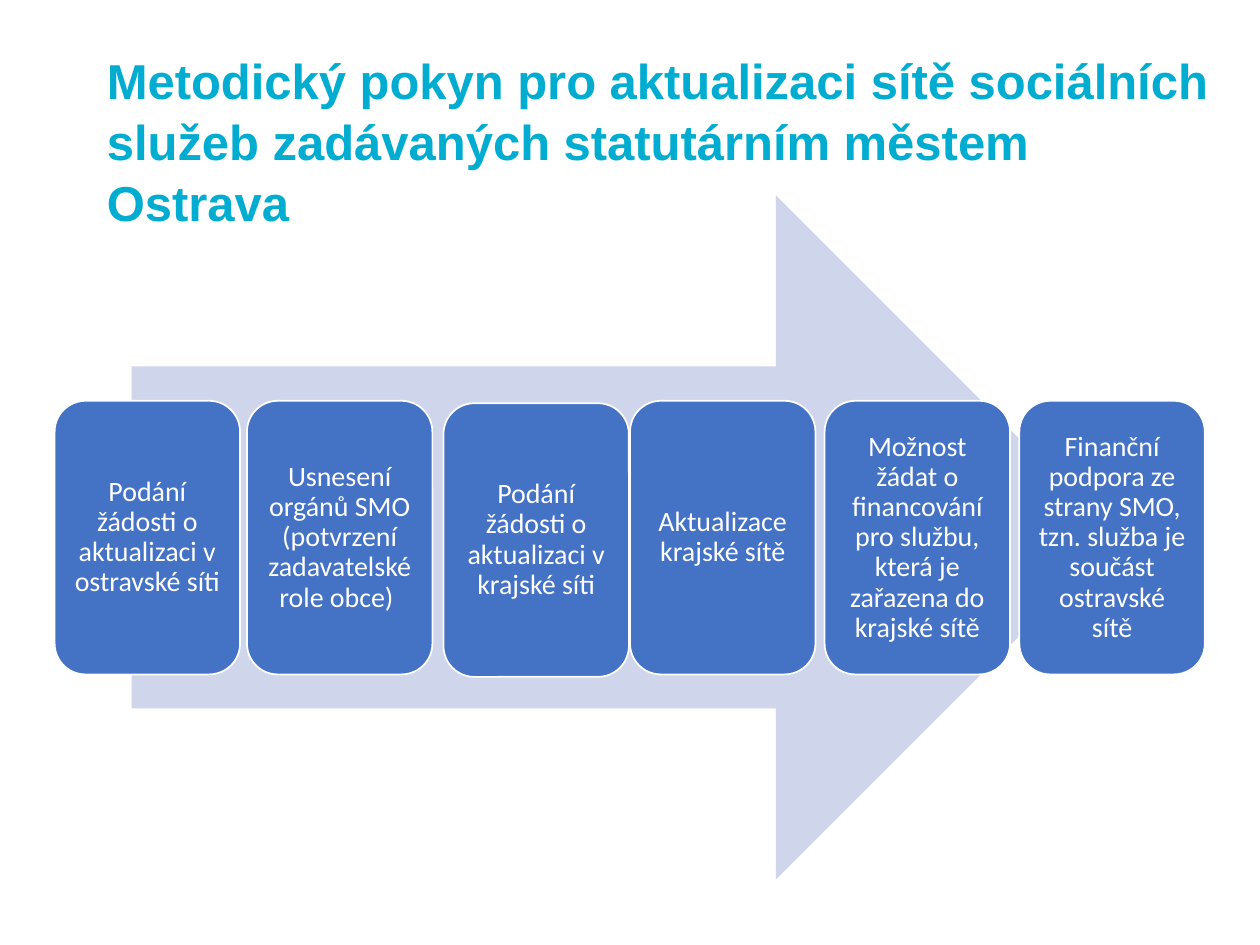
from pptx import Presentation
from pptx.dml.color import RGBColor
from pptx.enum import shapes, text
from pptx.util import Pt

hues = {"title": "00ADD0", "arrow": "CFD5EA", "step": "4472C4", "white": "FFFFFF"}
steps = [
    (31.2, 229, "Podání žádosti o aktualizaci v ostravské síti"),
    (141.1, 229, "Usnesení orgánů SMO (potvrzení zadavatelské role obce) "),
    (253.4, 230.4, "Podání žádosti o aktualizaci v krajské síti"),
    (360, 229, "Aktualizace krajské sítě"),
    (471.2, 229, "Možnost žádat o financování pro službu, která je zařazena do krajské sítě"),
    (582.5, 229, "Finanční podpora ze strany SMO, tzn. služba je součást ostravské sítě"),
]


def color(name):
    return RGBColor.from_string(hues[name])


def add(kind, left, top, width, height, fill):
    shape = slide.shapes.add_shape(kind, Pt(left), Pt(top), Pt(width), Pt(height))
    shape.shadow.inherit = False
    shape.fill.solid()
    shape.fill.fore_color.rgb = color(fill)
    shape.line.fill.background()
    return shape


deck = Presentation()
deck.slide_width, deck.slide_height = Pt(720), Pt(540)
slide = deck.slides.add_slide(deck.slide_layouts[6])

title = slide.shapes.add_textbox(Pt(54), Pt(24), Pt(648), Pt(438))
title.text_frame.word_wrap = True
title.text_frame.text = "Metodický pokyn pro aktualizaci sítě sociálních služeb zadávaných statutárním městem Ostrava"
para = title.text_frame.paragraphs[0]
para.line_spacing = 1.04
font = para.runs[0].font
font.name, font.size, font.bold = "Arial", Pt(28), True
font.color.rgb = color("title")

add(shapes.MSO_SHAPE.RIGHT_ARROW, 75.2, 111.6, 563.6, 391, "arrow")

for left, top, label in steps:
    box = add(shapes.MSO_SHAPE.ROUNDED_RECTANGLE, left, top, 106, 156.4, "step")
    box.line.color.rgb = color("white")
    box.line.width = Pt(1)
    frame = box.text_frame
    frame.word_wrap = True
    frame.vertical_anchor = text.MSO_ANCHOR.MIDDLE
    frame.margin_left = frame.margin_right = Pt(5)
    frame.margin_top = frame.margin_bottom = Pt(5)
    frame.text = label
    para = frame.paragraphs[0]
    para.alignment = text.PP_ALIGN.CENTER
    para.line_spacing = 0.9
    font = para.runs[0].font
    font.name, font.size = "Calibri", Pt(16)
    font.color.rgb = color("white")

deck.save("out.pptx")
